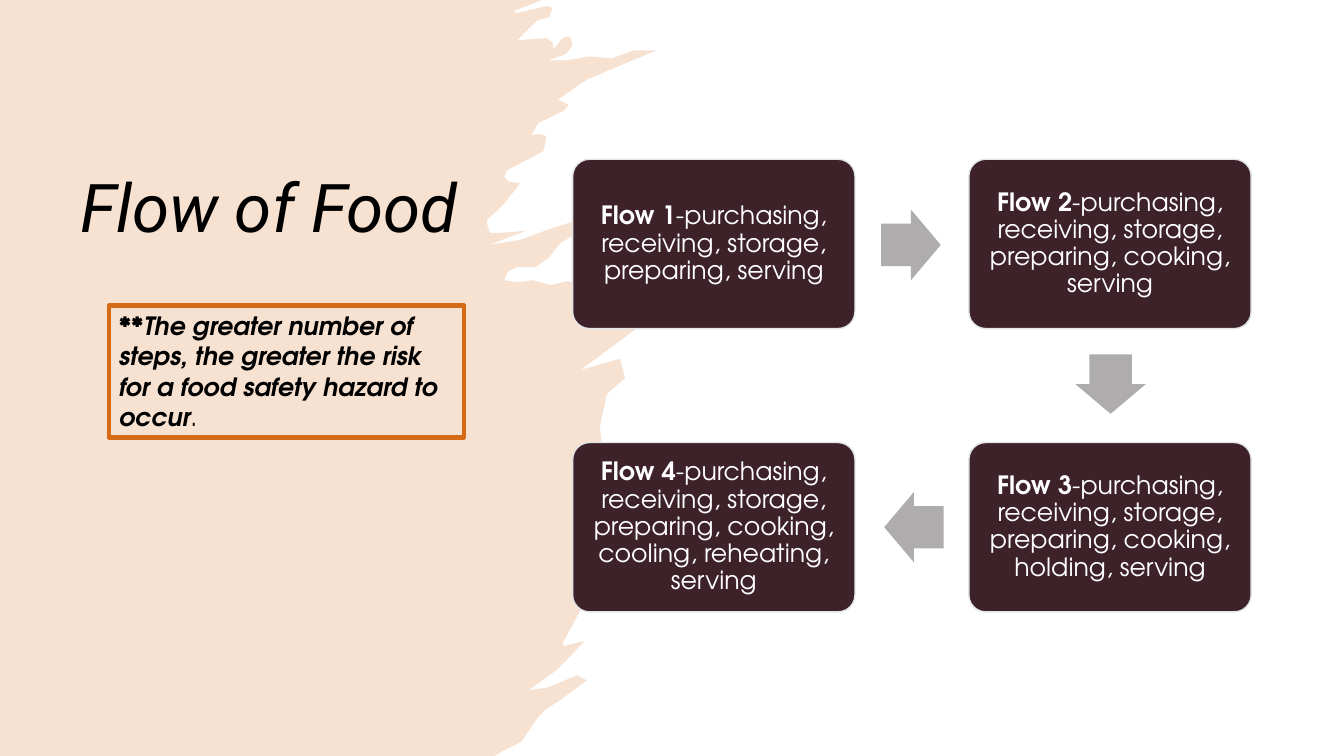
from pptx import Presentation
from pptx.dml.color import RGBColor
from pptx.enum.shapes import MSO_SHAPE
from pptx.enum.text import MSO_ANCHOR, PP_ALIGN
from pptx.util import Inches, Pt

COLORS = {"brush": "F7E1D1", "card": "3D2229", "card_edge": "E2E5E8", "arrow": "AFACAD",
          "accent": "D56A17", "white": "FFFFFF", "black": "000000"}
TITLE_FONT = "Roboto"
BODY_FONT = "TeX Gyre Adventor"
TITLE = "Flow of Food"
WARNING = [("**The greater number of steps, the greater the risk for a food safety hazard to occur", True),
           (".", False)]
FLOWS = [
    ("Flow 1", "-purchasing, receiving, storage, preparing, serving", 0, 0),
    ("Flow 2", "-purchasing, receiving, storage, preparing, cooking, serving", 1, 0),
    ("Flow 3", "-purchasing, receiving, storage, preparing, cooking, holding, serving", 1, 1),
    ("Flow 4", "-purchasing, receiving, storage, preparing, cooking, cooling, reheating, serving", 0, 1),
]
ARROWS = [(8.74, 2.08, 0), (10.72, 3.46, 90), (8.77, 4.88, 180)]
CARD_LEFT, CARD_TOP, CARD_WIDTH, CARD_HEIGHT = 5.68, 1.58, 2.8, 1.68
COLUMN_STEP, ROW_STEP = 3.93, 2.81
BRUSH_UNIT = Inches(0.01)
BRUSH_EDGE = [
    (538, 0), (0, 0), (0, 750), (491, 750), (497, 746), (517, 736), (534, 711), (541, 704),
    (555, 695), (582, 675), (572, 670), (544, 682), (524, 685), (553, 664), (580, 636),
    (559, 641), (558, 638), (576, 605), (585, 592), (626, 552), (587, 570), (627, 531),
    (647, 517), (651, 509), (643, 507), (617, 510), (649, 484), (625, 488), (618, 477),
    (606, 461), (598, 452), (595, 423), (602, 391), (620, 375), (615, 356), (576, 367),
    (634, 324), (624, 323), (609, 321), (596, 314), (589, 298), (587, 297), (581, 282),
    (562, 279), (546, 283), (529, 278), (513, 280), (500, 278), (504, 269), (513, 265),
    (531, 265), (544, 256), (556, 241), (598, 217), (606, 208), (546, 227), (516, 238),
    (485, 243), (522, 229), (497, 231), (486, 231), (483, 222), (483, 218), (493, 209),
    (499, 203), (516, 182), (504, 180), (500, 175), (503, 169), (539, 150), (542, 135),
    (535, 133), (527, 134), (534, 122), (559, 110), (564, 104), (558, 101), (553, 99),
    (582, 79), (651, 50), (629, 50), (607, 58), (584, 56), (562, 60), (543, 60), (561, 54),
    (568, 45), (565, 36), (558, 38), (549, 49), (548, 42), (542, 38), (513, 40), (533, 20),
    (545, 17), (548, 8), (542, 6), (513, 13), (509, 11), (525, 5),
]


def color(name):
    return RGBColor.from_string(COLORS[name])


def style(shape, fill=None, line=None, width=1):
    shape.shadow.inherit = False
    if fill:
        shape.fill.solid()
        shape.fill.fore_color.rgb = color(fill)
    else:
        shape.fill.background()
    if line:
        shape.line.color.rgb = color(line)
        shape.line.width = Pt(width)
    else:
        shape.line.fill.background()


def write(shape, runs, size, font, ink, anchor, align=PP_ALIGN.LEFT, spacing=1.0):
    frame = shape.text_frame
    frame.word_wrap = True
    frame.vertical_anchor = anchor
    paragraph = frame.paragraphs[0]
    paragraph.alignment = align
    paragraph.line_spacing = spacing
    paragraph.font.size = Pt(size)
    paragraph.font.name = font
    paragraph.font.color.rgb = color(ink)
    for text, bold, italic in runs:
        run = paragraph.add_run()
        run.text = text
        run.font.bold = bold
        run.font.italic = italic
    return frame


def add_brush(slide):
    builder = slide.shapes.build_freeform(*BRUSH_EDGE[0], scale=float(BRUSH_UNIT))
    builder.add_line_segments(BRUSH_EDGE[1:], close=True)
    style(builder.convert_to_shape(), "brush")


def add_card(slide, name, steps, column, row):
    card = slide.shapes.add_shape(
        MSO_SHAPE.ROUNDED_RECTANGLE,
        Inches(CARD_LEFT + column * COLUMN_STEP), Inches(CARD_TOP + row * ROW_STEP),
        Inches(CARD_WIDTH), Inches(CARD_HEIGHT))
    card.adjustments[0] = 0.1
    style(card, "card", "card_edge")
    frame = write(card, [(name, True, False), (steps, False, False)], 18, BODY_FONT,
                  "white", MSO_ANCHOR.MIDDLE, PP_ALIGN.CENTER, 0.9)
    frame.margin_left = frame.margin_right = Inches(0.1)
    frame.margin_top = frame.margin_bottom = Inches(0.1)


def add_arrow(slide, left, top, rotation):
    arrow = slide.shapes.add_shape(
        MSO_SHAPE.RIGHT_ARROW, Inches(left), Inches(top), Inches(0.59), Inches(0.7))
    arrow.adjustments[0] = 0.6
    arrow.adjustments[1] = 0.5
    arrow.rotation = rotation
    style(arrow, "arrow")


def main():
    """Build the Flow of Food slide."""
    presentation = Presentation()
    presentation.slide_width = Inches(13.33)
    presentation.slide_height = Inches(7.5)
    slide = presentation.slides.add_slide(presentation.slide_layouts[6])
    add_brush(slide)
    title = slide.shapes.add_textbox(Inches(0.7), Inches(0.7), Inches(4.45), Inches(1.8))
    write(title, [(TITLE, False, True)], 48, TITLE_FONT, "black", MSO_ANCHOR.BOTTOM, spacing=0.9)
    for flow in FLOWS:
        add_card(slide, *flow)
    for arrow in ARROWS:
        add_arrow(slide, *arrow)
    warning = slide.shapes.add_shape(
        MSO_SHAPE.RECTANGLE, Inches(1.08), Inches(3.03), Inches(3.52), Inches(1.31))
    style(warning, line="accent", width=3)
    write(warning, [(text, strong, strong) for text, strong in WARNING], 18, BODY_FONT,
          "black", MSO_ANCHOR.TOP)
    presentation.save("out.pptx")


if __name__ == "__main__":
    main()
